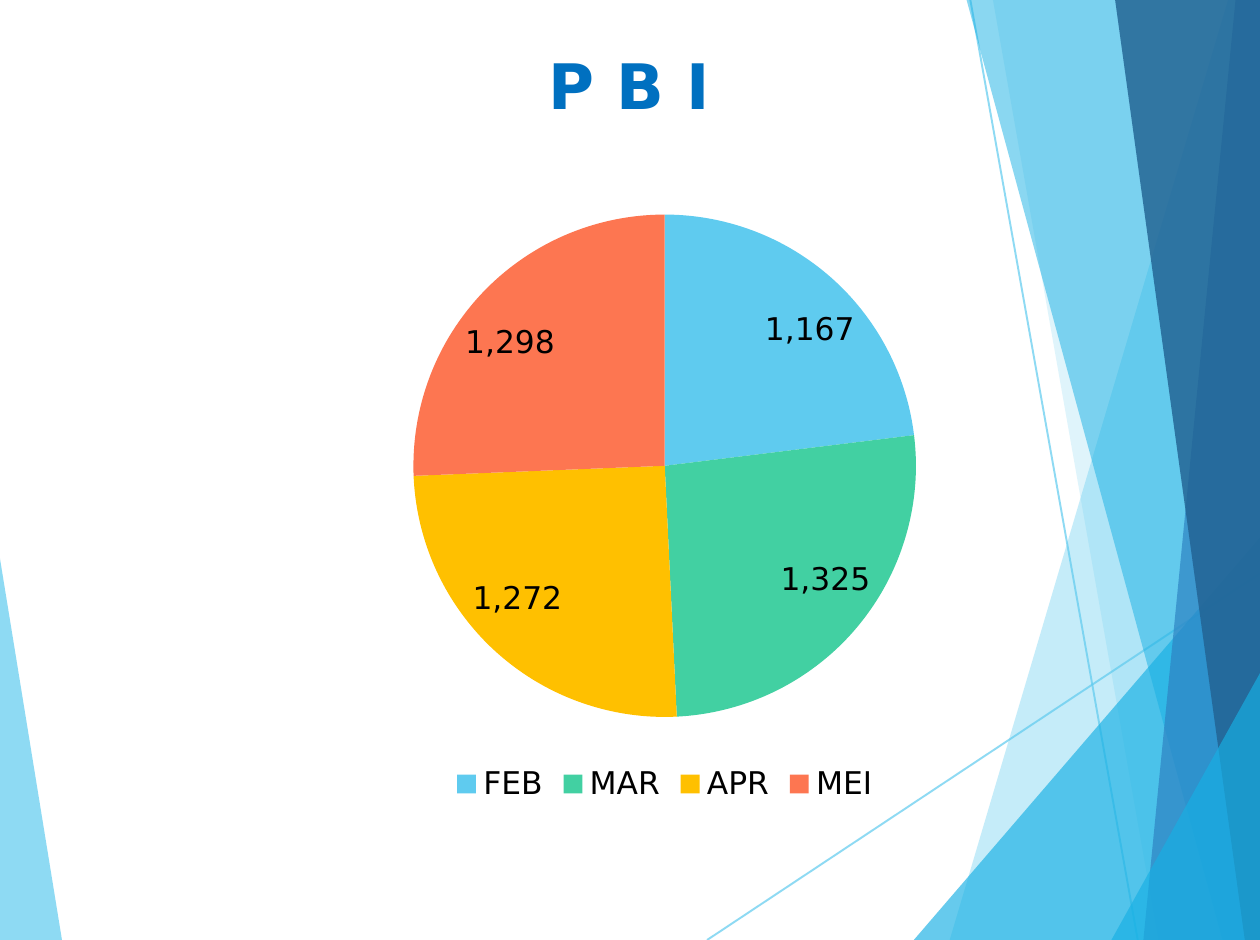
from pptx import Presentation
from pptx.chart.data import CategoryChartData
from pptx.dml.color import RGBColor
from pptx.enum.chart import XL_CHART_TYPE, XL_LABEL_POSITION, XL_LEGEND_POSITION
from pptx.enum.shapes import MSO_CONNECTOR
from pptx.enum.text import MSO_ANCHOR, PP_ALIGN
from pptx.oxml import parse_xml
from pptx.oxml.ns import nsdecls, qn
from pptx.util import Pt

PIE = XL_CHART_TYPE.PIE
BEST_FIT = XL_LABEL_POSITION.BEST_FIT
BOTTOM = XL_LEGEND_POSITION.BOTTOM
STRAIGHT = MSO_CONNECTOR.STRAIGHT
TOP = MSO_ANCHOR.TOP
CENTER = PP_ALIGN.CENTER

SCALE = 9144
WIDTH, HEIGHT = 670, 500
FONT = "DejaVu Sans"
SKY, CYAN, BLUE, NAVY = "5FCBEF", "17B0E4", "2E83C3", "226292"

LEFT_FACET = ([(0, 297), (33, HEIGHT), (0, HEIGHT)], SKY, 70)
RAYS = [((376, 500), (670, 305)), ((516, 0), (605, 500))]
RIGHT_FACETS = [
    ([(653, 0), (505, HEIGHT), (WIDTH, HEIGHT), (WIDTH, 0)], SKY, 36),
    ([(528, 0), (616, HEIGHT), (WIDTH, HEIGHT), (WIDTH, 0)], SKY, 20),
    ([(486, HEIGHT), (WIDTH, 286), (WIDTH, HEIGHT)], CYAN, 66),
    ([(514, 0), (650, HEIGHT), (WIDTH, HEIGHT), (WIDTH, 0)], CYAN, 50),
    ([(657, 0), (608, HEIGHT), (WIDTH, HEIGHT), (WIDTH, 0)], BLUE, 70),
    ([(593, 0), (662, HEIGHT), (WIDTH, HEIGHT), (WIDTH, 0)], NAVY, 82),
    ([(591, HEIGHT), (WIDTH, 358), (WIDTH, HEIGHT)], CYAN, 66),
]
MONTHS = [
    ("FEB", 1167, SKY),
    ("MAR", 1325, "42D0A2"),
    ("APR", 1272, "FFC000"),
    ("MEI", 1298, "FD7651"),
]
PLOT_AREA = {"x": 0.27, "y": 0.04, "w": 0.46, "h": 0.81}


def px(length):
    """Turn px into EMU."""
    return length * SCALE


def colour(value):
    """Turn a hex string into a colour."""
    return RGBColor.from_string(value)


def set_font(font, value, **formats):
    """Apply a colour and format values to a font."""
    font.color.rgb = colour(value)
    for name, setting in formats.items():
        setattr(font, name, setting)


def set_opacity(shape, percent):
    """Make the colours of a shape translucent."""
    for element in shape.element.iter(qn("a:srgbClr")):
        element.append(parse_xml(f'<a:alpha {nsdecls("a")} val="{percent * 1000}"/>'))


def add_facet(page, points, value, opacity):
    """Add a translucent polygon without an outline."""
    builder = page.shapes.build_freeform(*points[0], scale=SCALE)
    builder.add_line_segments(points[1:], close=True)
    facet = builder.convert_to_shape()
    facet.shadow.inherit = False
    facet.fill.solid()
    facet.fill.fore_color.rgb = colour(value)
    facet.line.fill.background()
    set_opacity(facet, opacity)


def add_ray(page, start, end):
    """Add a thin translucent line."""
    ray = page.shapes.add_connector(STRAIGHT, *map(px, start + end))
    ray.line.width = Pt(0.75)
    ray.line.color.rgb = colour(SKY)
    set_opacity(ray, 70)
    ray.element.spPr.append(parse_xml(f'<a:effectLst {nsdecls("a")}/>'))


def add_title(page, text):
    """Place and format the title in front of the background."""
    title = page.shapes.title
    title.left, title.top, title.width, title.height = map(px, (33, 20, 603, 83))
    title.element.getparent().append(title.element)
    title.text_frame.vertical_anchor = TOP
    para = title.text_frame.paragraphs[0]
    para.alignment = CENTER
    span = para.add_run()
    span.text = text
    set_font(span.font, "0070C0", name=FONT, size=Pt(24), bold=True)


def set_plot_area(chart):
    """Fix the inner plot area as fractions of the chart."""
    area = chart.element.find(".//" + qn("c:plotArea"))
    for layout in area.findall(qn("c:layout")):
        area.remove(layout)
    modes = "".join(f'<c:{side}Mode val="edge"/>' for side in "xy")
    sizes = "".join(f'<c:{key} val="{size}"/>' for key, size in PLOT_AREA.items())
    area.insert(0, parse_xml(
        f'<c:layout {nsdecls("c")}><c:manualLayout><c:layoutTarget val="inner"/>'
        f"{modes}{sizes}</c:manualLayout></c:layout>"))


def add_pie(page):
    """Add the pie chart of monthly values."""
    names, values, fills = zip(*MONTHS)
    data = CategoryChartData(number_format="#,##0")
    data.categories = names
    data.add_series("Series 1", values)
    chart = page.shapes.add_chart(PIE, *map(px, (52, 101, 603, 330)), data).chart
    chart.has_title = False
    set_font(chart.font, "000000", name="Cabin", size=Pt(18))
    set_plot_area(chart)

    chart.has_legend = True
    chart.legend.position = BOTTOM
    chart.legend.include_in_layout = False
    plot = chart.plots[0]
    plot.vary_by_categories = True
    plot.has_data_labels = True
    labels = plot.data_labels
    formats = {"show_value": True, "number_format": "#,##0",
               "number_format_is_linked": False, "position": BEST_FIT}
    for name, setting in formats.items():
        setattr(labels, name, setting)
    for part in (chart.legend, labels):
        set_font(part.font, "000000", name=FONT, size=Pt(12))

    for index, value in enumerate(fills):
        slice_format = plot.series[0].points[index].format
        slice_format.fill.solid()
        slice_format.fill.fore_color.rgb = colour(value)
        slice_format.line.fill.background()


def main():
    """Build the slide and save it."""
    deck = Presentation()
    deck.slide_width, deck.slide_height = px(WIDTH), px(HEIGHT)
    page = deck.slides.add_slide(deck.slide_layouts[5])
    add_facet(page, *LEFT_FACET)
    for start, end in RAYS:
        add_ray(page, start, end)
    for facet in RIGHT_FACETS:
        add_facet(page, *facet)
    add_title(page, "P B I")
    add_pie(page)
    deck.save("out.pptx")


if __name__ == "__main__":
    main()
